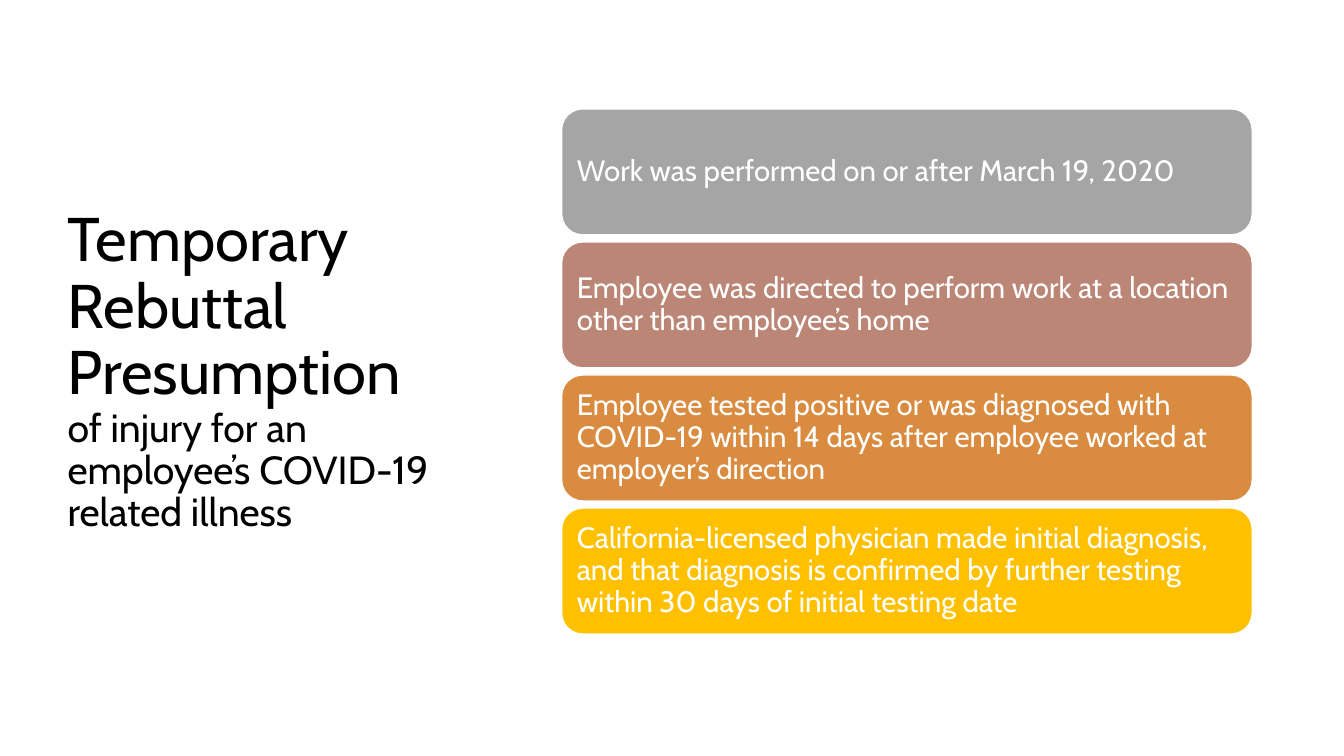
import pptx
import pptx.dml.color
import pptx.enum.shapes
import pptx.enum.text
import pptx.util

SLIDE_WIDTH, SLIDE_HEIGHT = 13.33, 7.5
FONT = "Cabin"
TITLE_BOX = (0.57, 0.68, 4.39, 6.02)
CARDS_BOX = (5.57, 1.08, 6.85, 5.21)
CARD_GAP = 0.07
CARD_INSET = 0.15
TITLE_RUNS = [
    ("Temporary Rebuttal Presumption ", 44),
    ("of injury for an employee’s COVID-19 related illness", 28),
]
CONDITIONS = [
    ("Work was performed on or after March 19, 2020", "A5A5A5"),
    ("Employee was directed to perform work at a location other than employee’s home", "BB8676"),
    ("Employee tested positive or was diagnosed with COVID-19 within 14 days after "
     "employee worked at employer’s direction", "D98B3F"),
    ("California-licensed physician made initial diagnosis, and that diagnosis is confirmed "
     "by further testing within 30 days of initial testing date", "FFC000"),
]


def color(value):
    """Return the colour for a hex string."""
    return pptx.dml.color.RGBColor.from_string(value)


def apply_format(target, values):
    """Set each named attribute of the target."""
    for name, value in values.items():
        setattr(target, name, value)


def format_frame(frame, side, edge):
    """Wrap and centre the text vertically inside the given insets."""
    apply_format(frame, {
        "word_wrap": True,
        "auto_size": pptx.enum.text.MSO_AUTO_SIZE.NONE,
        "vertical_anchor": pptx.enum.text.MSO_ANCHOR.MIDDLE,
        "margin_left": pptx.util.Inches(side),
        "margin_right": pptx.util.Inches(side),
        "margin_top": pptx.util.Inches(edge),
        "margin_bottom": pptx.util.Inches(edge),
    })


def write_runs(paragraph, runs, text_color):
    """Write sized runs into a left-aligned paragraph, one line break between them."""
    apply_format(paragraph, {
        "alignment": pptx.enum.text.PP_ALIGN.LEFT,
        "line_spacing": 0.9,
        "space_before": pptx.util.Pt(0),
    })
    for index, (text, size) in enumerate(runs):
        if index:
            paragraph.add_line_break()
        run = paragraph.add_run()
        run.text = text
        apply_format(run.font, {"name": FONT, "size": pptx.util.Pt(size)})
        run.font.color.rgb = color(text_color)


def place_title(slide, box):
    """Move the title placeholder into the box and fill it."""
    title = slide.shapes.title
    names = ("left", "top", "width", "height")
    apply_format(title, dict(zip(names, map(pptx.util.Inches, box))))
    format_frame(title.text_frame, 0.1, 0.05)
    write_runs(title.text_frame.paragraphs[0], TITLE_RUNS, "000000")


def place_cards(slide, box):
    """Stack one rounded card per condition in the box."""
    left, top, width, height = box
    card_height = (height - CARD_GAP * (len(CONDITIONS) - 1)) / len(CONDITIONS)
    for row, (text, fill) in enumerate(CONDITIONS):
        card_box = (left, top + row * (card_height + CARD_GAP), width, card_height)
        card = slide.shapes.add_shape(
            pptx.enum.shapes.MSO_SHAPE.ROUNDED_RECTANGLE, *map(pptx.util.Inches, card_box))
        card.shadow.inherit = False
        card.fill.solid()
        card.fill.fore_color.rgb = color(fill)
        card.line.color.rgb = color("FFFFFF")
        card.line.width = pptx.util.Pt(1)
        format_frame(card.text_frame, CARD_INSET - 0.06, CARD_INSET)
        write_runs(card.text_frame.paragraphs[0], [(text, 21)], "FFFFFF")


def main():
    """Build and save the presentation."""
    presentation = pptx.Presentation()
    presentation.slide_width = pptx.util.Inches(SLIDE_WIDTH)
    presentation.slide_height = pptx.util.Inches(SLIDE_HEIGHT)
    slide = presentation.slides.add_slide(presentation.slide_layouts[5])
    place_title(slide, TITLE_BOX)
    place_cards(slide, CARDS_BOX)
    presentation.save("out.pptx")


if __name__ == "__main__":
    main()
